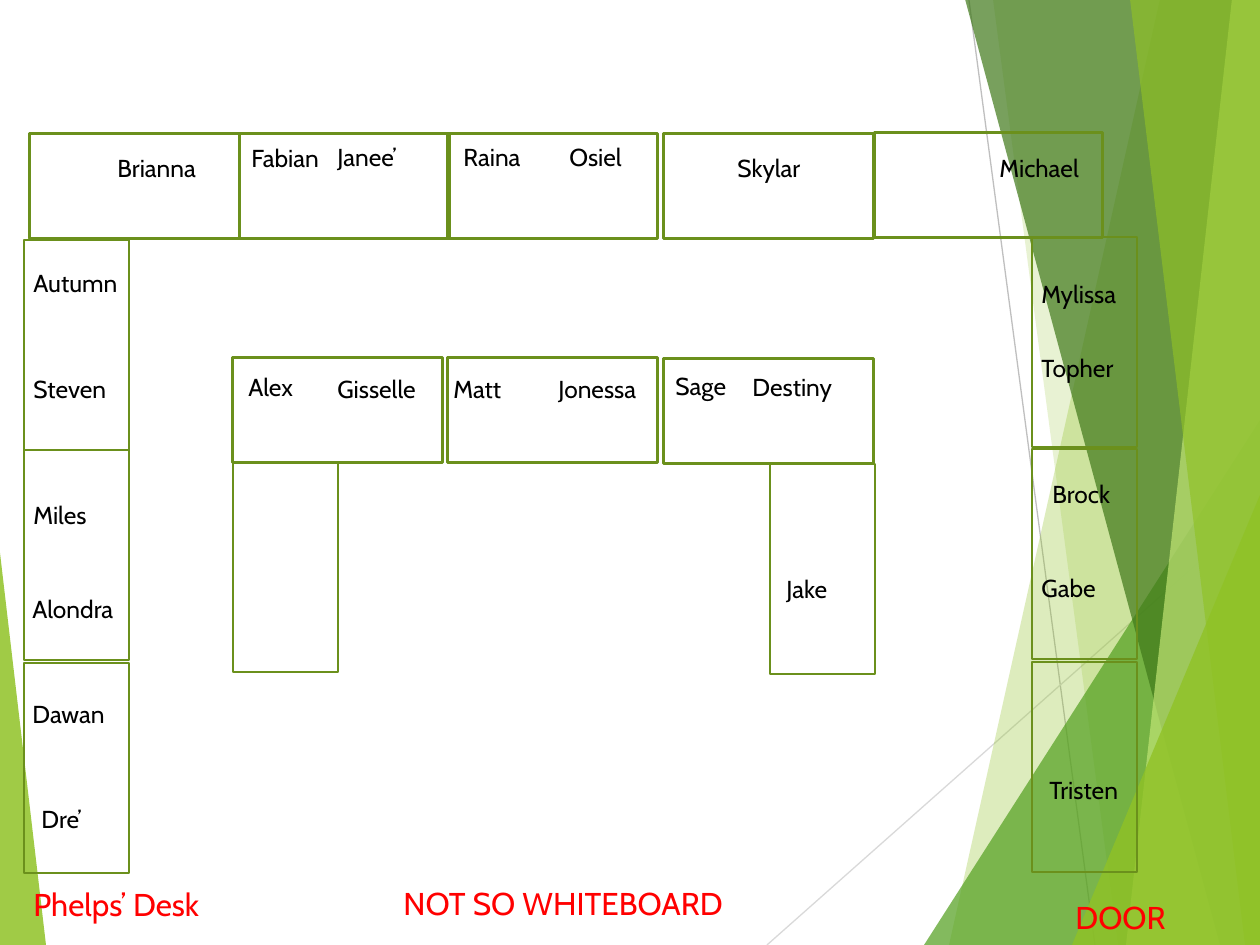
import pptx
import pptx.dml.color
import pptx.enum.shapes
import pptx.enum.text
import pptx.oxml.ns
import pptx.util
from lxml import etree

EMU_PER_PX = 914400 / 126
SHAPES = pptx.enum.shapes.MSO_SHAPE
COLOURS = {
    "text": "000000", "label": "FF0000", "desk": "6B901C",
    "lime": "90C226", "pale": "C0E474", "leaf": "54A021", "forest": "3F7819",
    "grey": "BFBFBF", "silver": "D9D9D9",
}


def px(length):
    return pptx.util.Emu(round(length * EMU_PER_PX))


def rgb(name):
    return pptx.dml.color.RGBColor.from_string(COLOURS[name])


class SeatingSlide:
    font = "Cabin"
    desk_width, desk_length = 105, 210

    def __init__(self, deck):
        self.shapes = deck.slides.add_slide(deck.slide_layouts[6]).shapes

    def ray(self, start, end, colour):
        ray = self.shapes.add_connector(
            pptx.enum.shapes.MSO_CONNECTOR.STRAIGHT, *map(px, start + end))
        ray.line.color.rgb = rgb(colour)
        ray.line.width = pptx.util.Pt(0.75)
        etree.SubElement(ray._element.spPr, pptx.oxml.ns.qn("a:effectLst"))

    def tint(self, facet, colour, opacity):
        facet.shadow.inherit = False
        facet.line.fill.background()
        facet.fill.solid()
        facet.fill.fore_color.rgb = rgb(colour)
        hue = facet._element.spPr.find(".//" + pptx.oxml.ns.qn("a:srgbClr"))
        alpha = etree.SubElement(hue, pptx.oxml.ns.qn("a:alpha"))
        alpha.set("val", str(opacity * 1000))

    def band(self, top_left, bottom_left, colour, opacity):
        outline = self.shapes.build_freeform(top_left, -1, scale=EMU_PER_PX)
        outline.add_line_segments([(1260, -1), (1260, 945), (bottom_left, 945)])
        self.tint(outline.convert_to_shape(), colour, opacity)

    def triangle(self, left, top, width, apex, colour, opacity):
        triangle = self.shapes.add_shape(
            SHAPES.ISOSCELES_TRIANGLE, *map(px, (left, top, width, 945 - top)))
        triangle.adjustments[0] = apex
        self.tint(triangle, colour, opacity)

    def desk(self, left, top, length=desk_length, rotation=0):
        desk = self.shapes.add_shape(
            SHAPES.RECTANGLE, *map(px, (left, top, self.desk_width, length)))
        desk.rotation = rotation
        desk.shadow.inherit = False
        desk.fill.background()
        desk.line.color.rgb = rgb("desk")
        desk.line.width = pptx.util.Pt(1.5)

    def text(self, wording, left, top, width, height=43, size=14, colour="text"):
        frame = self.shapes.add_textbox(
            *map(px, (left, top, width, height))).text_frame
        frame.word_wrap = True
        frame.auto_size = pptx.enum.text.MSO_AUTO_SIZE.SHAPE_TO_FIT_TEXT
        frame.text = wording
        font = frame.paragraphs[0].runs[0].font
        font.name = self.font
        font.size = pptx.util.Pt(size)
        font.color.rgb = rgb(colour)

    def label(self, wording, left, top, width, height=50):
        self.text(wording, left, top, width, height, 18, "label")


def draw_backdrop(slide):
    slide.ray((969, 0), (1095, 945), "grey")
    slide.ray((1260, 508), (767, 945), "silver")
    slide.band(1160, 949, "lime", 30)
    slide.band(993, 1118, "lime", 20)
    slide.triangle(924, 420, 336, 1, "leaf", 72)
    slide.band(965, 1220, "forest", 70)
    slide.band(1232, 1126, "pale", 70)
    slide.band(1130, 1245, "lime", 65)
    slide.triangle(1072, 495, 188, 1, "lime", 80)
    slide.triangle(0, 553, 46, 0, "lime", 85)


def draw_desks(slide):
    upright_columns = {
        24: (663, 450, 240), 1032: (662, 449, 237), 233: (462,), 770: (464,),
    }
    for left, tops in upright_columns.items():
        for top in tops:
            slide.desk(left, top)
    for left in (82, 292, 500, 716):
        slide.desk(left, 81, rotation=90)
    slide.desk(936, 71, length=228, rotation=90)
    for left, top in ((285, 305), (500, 305), (716, 306)):
        slide.desk(left, top, rotation=90)


def draw_names(slide):
    students = [
        ("Dre’", 29, 798, 98), ("Dawan", 20, 693, 125),
        ("Alondra", 20, 588, 115), ("Miles", 21, 494, 98),
        ("Autumn", 21, 262, 115), ("Topher", 1029, 347, 170),
        ("Fabian", 239, 137, 98), ("Skylar", 725, 147, 110),
        ("Osiel", 557, 136, 98), ("Mylissa", 1029, 273, 125),
        ("Brianna", 105, 147, 134), ("Michael", 987, 147, 126),
        ("Raina", 451, 136, 98), ("Steven", 21, 368, 120),
        ("Gabe", 1029, 567, 98), ("Tristen", 1037, 769, 118),
        ("Alex", 236, 366, 98), ("Gisselle", 325, 368, 126),
        ("Destiny", 740, 366, 135), ("Sage", 663, 365, 98),
        ("Matt", 441, 368, 125), ("Jake", 774, 568, 118),
        ("Jonessa", 546, 368, 116), ("Brock", 1040, 473, 118),
        ("Janee’", 325, 136, 118),
    ]
    for student in students:
        slide.text(*student)
    slide.label("DOOR", 1063, 892, 197, 53)
    slide.label("NOT SO WHITEBOARD", 391, 878, 459)
    slide.label("Phelps’ Desk", 21, 879, 212)


def main():
    deck = pptx.Presentation()
    deck.slide_width, deck.slide_height = px(1260), px(945)
    slide = SeatingSlide(deck)
    draw_backdrop(slide)
    draw_desks(slide)
    draw_names(slide)
    deck.save("out.pptx")


if __name__ == "__main__":
    main()
